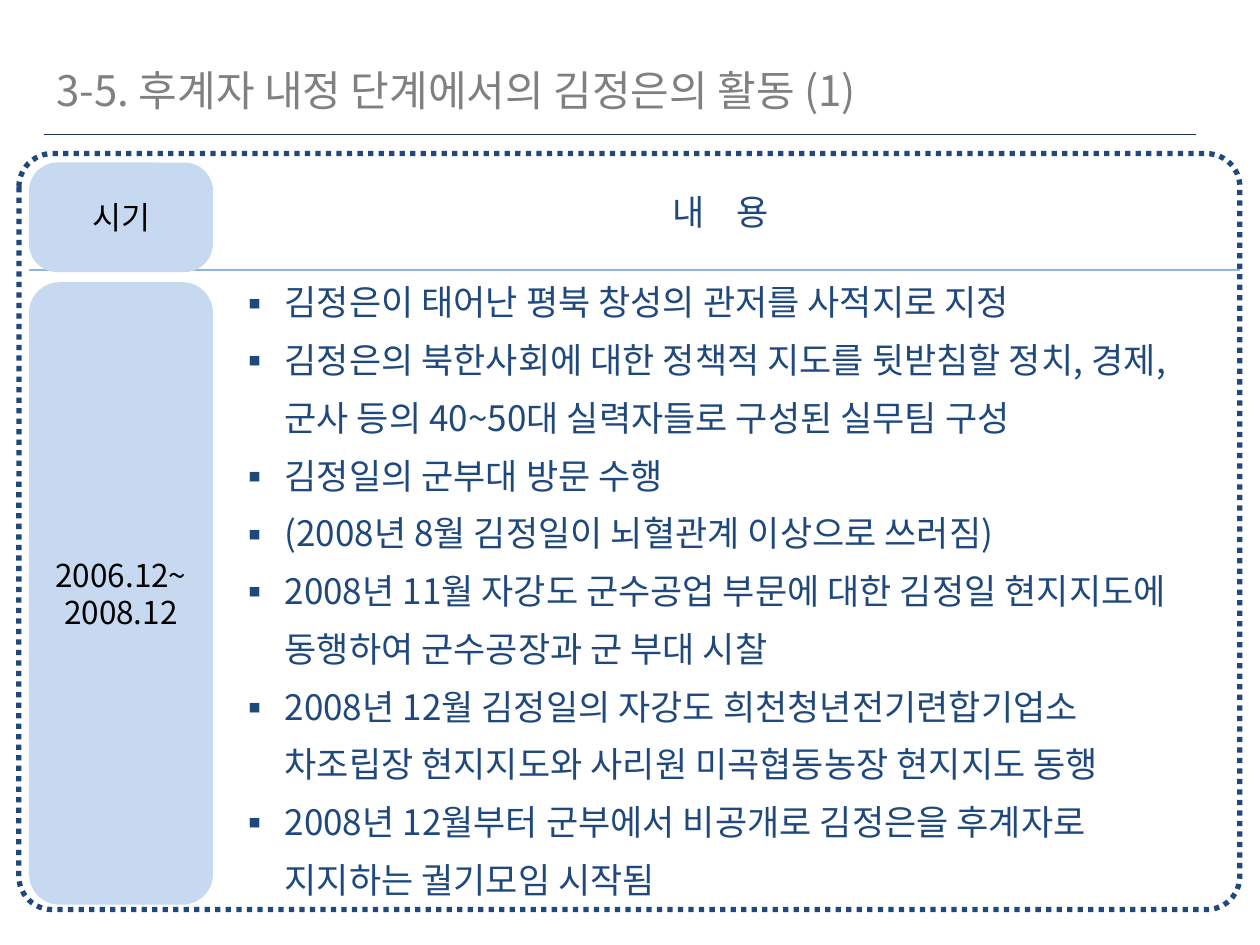
from dataclasses import dataclass
from typing import Optional

import lxml.etree
import pptx
import pptx.dml.color
import pptx.enum.dml
import pptx.enum.shapes
import pptx.enum.text
import pptx.oxml.ns
import pptx.util

Pt = pptx.util.Pt
ALIGN = pptx.enum.text.PP_ALIGN
ANCHOR = pptx.enum.text.MSO_ANCHOR


@dataclass(frozen=True)
class Theme:
    font: str = "Noto Sans CJK KR"
    title: str = "808080"
    navy: str = "1F497D"
    rule: str = "17375E"
    divider: str = "8EB4E3"
    label_fill: str = "C6D9F1"
    label_text: str = "000000"
    panel_fill: str = "FFFFFF"
    title_size: float = 24
    content_size: float = 20
    label_size: float = 18


@dataclass(frozen=True)
class Panel:
    left: float
    top: float
    width: float
    height: float
    corner: float
    fill: Optional[str] = None
    opacity: int = 100


@dataclass(frozen=True)
class Rule:
    left: float
    right: float
    y: float
    color: str
    weight: float


THEME = Theme()
LABEL_LEFT, LABEL_WIDTH = 16.6, 105.1
CONTENT_LEFT, CONTENT_WIDTH = 121.7, 580.3
BULLET_INDENT = 27
LINE_PITCH = 33

FRAME = Panel(10.8, 87.8, 697.7, 432, 0.044)
CONTENT_HEADER = Panel(CONTENT_LEFT, 84.2, CONTENT_WIDTH, 61.9, 0.167, THEME.panel_fill, 50)
CONTENT_BODY = Panel(CONTENT_LEFT, 151.9, CONTENT_WIDTH, 362.2, 0.065, THEME.panel_fill, 50)
PERIOD_LABELS = [
    (Panel(LABEL_LEFT, 92.9, LABEL_WIDTH, 62.6, 0.259, THEME.label_fill), "시기"),
    (Panel(LABEL_LEFT, 161.3, LABEL_WIDTH, 355.7, 0.166, THEME.label_fill), "2006.12~2008.12"),
]
TITLE_RULE = Rule(25.2, 683.3, 77, THEME.rule, 0.75)
HEADER_RULE = Rule(LABEL_LEFT, 708.5, 154.1, THEME.divider, 1.1)

TITLE = "3-5. 후계자 내정 단계에서의 김정은의 활동 (1)"
ACTIVITIES = [
    "김정은이 태어난 평북 창성의 관저를 사적지로 지정",
    "김정은의 북한사회에 대한 정책적 지도를 뒷받침할 정치, 경제, 군사 등의 40~50대 실력자들로 구성된 실무팀 구성",
    "김정일의 군부대 방문 수행",
    "(2008년 8월 김정일이 뇌혈관계 이상으로 쓰러짐)",
    "2008년 11월 자강도 군수공업 부문에 대한 김정일 현지지도에 동행하여 군수공장과 군 부대 시찰",
    "2008년 12월 김정일의 자강도 희천청년전기련합기업소 차조립장 현지지도와 사리원 미곡협동농장 현지지도 동행",
    "2008년 12월부터 군부에서 비공개로 김정은을 후계자로 지지하는 궐기모임 시작됨",
]


def rgb(color: str) -> pptx.dml.color.RGBColor:
    return pptx.dml.color.RGBColor.from_string(color)


def add_element(parent, tag: str, **attributes: str):
    return lxml.etree.SubElement(parent, pptx.oxml.ns.qn(tag), **attributes)


def style_paragraph(para, size: float, color: str, align=ALIGN.LEFT) -> None:
    para.alignment = align
    para.font.size = Pt(size)
    para.font.color.rgb = rgb(color)
    para.font.name = THEME.font
    add_element(para.font._element, "a:ea", typeface=THEME.font)


def add_panel(page, panel: Panel):
    box = page.shapes.add_shape(
        pptx.enum.shapes.MSO_SHAPE.ROUNDED_RECTANGLE,
        Pt(panel.left), Pt(panel.top), Pt(panel.width), Pt(panel.height),
    )
    box.shadow.inherit = False
    box.adjustments[0] = panel.corner
    box.line.fill.background()
    if panel.fill is None:
        box.fill.background()
    else:
        box.fill.solid()
        box.fill.fore_color.rgb = rgb(panel.fill)
        if panel.opacity < 100:
            color = box.fill._xPr.find(".//" + pptx.oxml.ns.qn("a:srgbClr"))
            add_element(color, "a:alpha", val=str(panel.opacity * 1000))
    box.text_frame.word_wrap = True
    box.text_frame.vertical_anchor = ANCHOR.MIDDLE
    return box


def add_rule(page, rule: Rule) -> None:
    line = page.shapes.add_connector(
        pptx.enum.shapes.MSO_CONNECTOR.STRAIGHT,
        Pt(rule.left), Pt(rule.y), Pt(rule.right), Pt(rule.y),
    )
    line.line.color.rgb = rgb(rule.color)
    line.line.width = Pt(rule.weight)
    add_element(line._element.spPr, "a:effectLst")


def add_content_header(page) -> None:
    para = add_panel(page, CONTENT_HEADER).text_frame.paragraphs[0]
    para.line_spacing = 1.5
    style_paragraph(para, THEME.content_size, THEME.navy, ALIGN.CENTER)
    span = para.add_run()
    span.text = "내 "
    span.font._element.set("spc", "675")
    para.add_run().text = "용"


def add_activities(page) -> None:
    frame = add_panel(page, CONTENT_BODY).text_frame
    for index, activity in enumerate(ACTIVITIES):
        para = frame.add_paragraph() if index else frame.paragraphs[0]
        para.text = activity
        para.line_spacing = Pt(LINE_PITCH)
        properties = para._p.get_or_add_pPr()
        properties.set("marL", str(Pt(BULLET_INDENT)))
        properties.set("indent", str(-Pt(BULLET_INDENT)))
        add_element(properties, "a:buFont", typeface=THEME.font)
        add_element(properties, "a:buChar", char="▪")
        style_paragraph(para, THEME.content_size, THEME.navy)


def add_frame(page) -> None:
    border = add_panel(page, FRAME).line
    border.color.rgb = rgb(THEME.navy)
    border.width = Pt(3)
    border.dash_style = pptx.enum.dml.MSO_LINE.ROUND_DOT


def add_period_label(page, panel: Panel, text: str) -> None:
    para = add_panel(page, panel).text_frame.paragraphs[0]
    para.text = text
    style_paragraph(para, THEME.label_size, THEME.label_text, ALIGN.CENTER)


def add_title(page) -> None:
    box = page.shapes.add_textbox(Pt(25.2), Pt(33.1), Pt(548), Pt(49.7))
    box.text_frame.word_wrap = True
    para = box.text_frame.paragraphs[0]
    para.text = TITLE
    style_paragraph(para, THEME.title_size, THEME.title)


def main() -> None:
    deck = pptx.Presentation()
    deck.slide_width, deck.slide_height = Pt(720), Pt(540)
    page = deck.slides.add_slide(deck.slide_layouts[6])
    add_rule(page, TITLE_RULE)
    add_content_header(page)
    add_activities(page)
    add_frame(page)
    add_rule(page, HEADER_RULE)
    for panel, text in PERIOD_LABELS:
        add_period_label(page, panel, text)
    add_title(page)
    deck.save("out.pptx")


if __name__ == "__main__":
    main()
